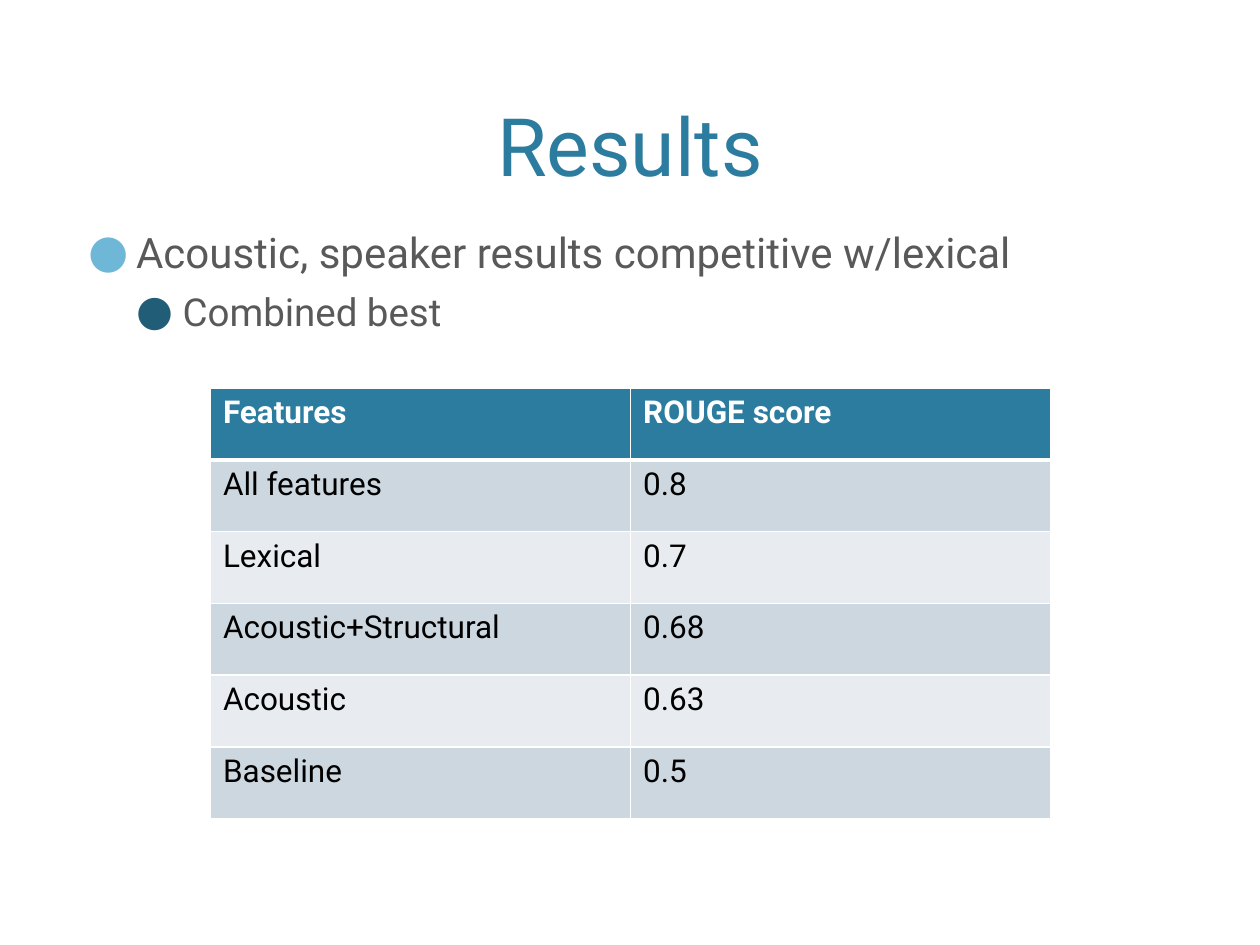
from lxml.etree import SubElement
from pptx import Presentation
from pptx.dml.color import RGBColor
from pptx.enum.text import MSO_ANCHOR, MSO_AUTO_SIZE, PP_ALIGN
from pptx.oxml.ns import qn
from pptx.util import Inches, Pt


def color(code):
    return RGBColor.from_string(code)


def write(para, text, size=18, ink="000000", bold=False, align=PP_ALIGN.LEFT, before=0):
    para.alignment = align
    para.space_before = Pt(before)
    run = para.add_run()
    run.text = text
    run.font.name = "Roboto"
    run.font.size = Pt(size)
    run.font.bold = bold
    run.font.color.rgb = color(ink)


deck = Presentation()
deck.slide_width, deck.slide_height = Inches(10), Inches(7.5)
slide = deck.slides.add_slide(deck.slide_layouts[1])

title = slide.shapes.title
body = slide.placeholders[1]
for box, top, height, anchor in (
    (title, 0.12, 1.46, MSO_ANCHOR.BOTTOM),
    (body, 1.75, 4.75, MSO_ANCHOR.TOP),
):
    box.left, box.top = Inches(0.6), Inches(top)
    box.width, box.height = Inches(8.8), Inches(height)
    box.text_frame.word_wrap = True
    box.text_frame.auto_size = MSO_AUTO_SIZE.NONE
    box.text_frame.vertical_anchor = anchor

write(title.text_frame.paragraphs[0], "Results", size=46, ink="2C7C9F", align=PP_ALIGN.CENTER)

points = [
    ("Acoustic, speaker results competitive w/lexical", 24, 20, 0.38, -0.38, "6FB7D7"),
    ("Combined best", 22, 6, 0.75, -0.37, "215D77"),
]
for level, (text, size, before, left, hang, dot) in enumerate(points):
    frame = body.text_frame
    para = frame.add_paragraph() if level else frame.paragraphs[0]
    para.level = level
    write(para, text, size=size, ink="595959", before=before)
    props = para._p.get_or_add_pPr()
    props.set("marL", str(Inches(left)))
    props.set("indent", str(Inches(hang)))
    SubElement(SubElement(props, qn("a:buClr")), qn("a:srgbClr"), val=dot)
    SubElement(props, qn("a:buSzPct"), val="110000")
    SubElement(props, qn("a:buFont"), typeface="Roboto")
    SubElement(props, qn("a:buChar"), char="●")

rows = [
    ("Features", "ROUGE score"),
    ("All features", "0.8"),
    ("Lexical", "0.7"),
    ("Acoustic+Structural", "0.68"),
    ("Acoustic", "0.63"),
    ("Baseline", "0.5"),
]
table = slide.shapes.add_table(
    len(rows), 2, Inches(1.67), Inches(3.08), Inches(6.67), Inches(3.42)
).table
for row in table.rows:
    row.height = Inches(0.57)
for r, row in enumerate(rows):
    head = r == 0
    fill = "2C7C9F" if head else "CDD7DF" if r % 2 else "E8ECF0"
    for c, text in enumerate(row):
        cell = table.cell(r, c)
        write(cell.text_frame.paragraphs[0], text, ink="FFFFFF" if head else "000000", bold=head)
        props = cell._tc.get_or_add_tcPr()
        for side in ("lnL", "lnR", "lnT", "lnB"):
            thick = (head and side == "lnB") or (r == 1 and side == "lnT")
            line = SubElement(props, qn("a:" + side), w=str(Pt(3 if thick else 1)))
            SubElement(SubElement(line, qn("a:solidFill")), qn("a:srgbClr"), val="FFFFFF")
        cell.fill.solid()
        cell.fill.fore_color.rgb = color(fill)

deck.save("out.pptx")
